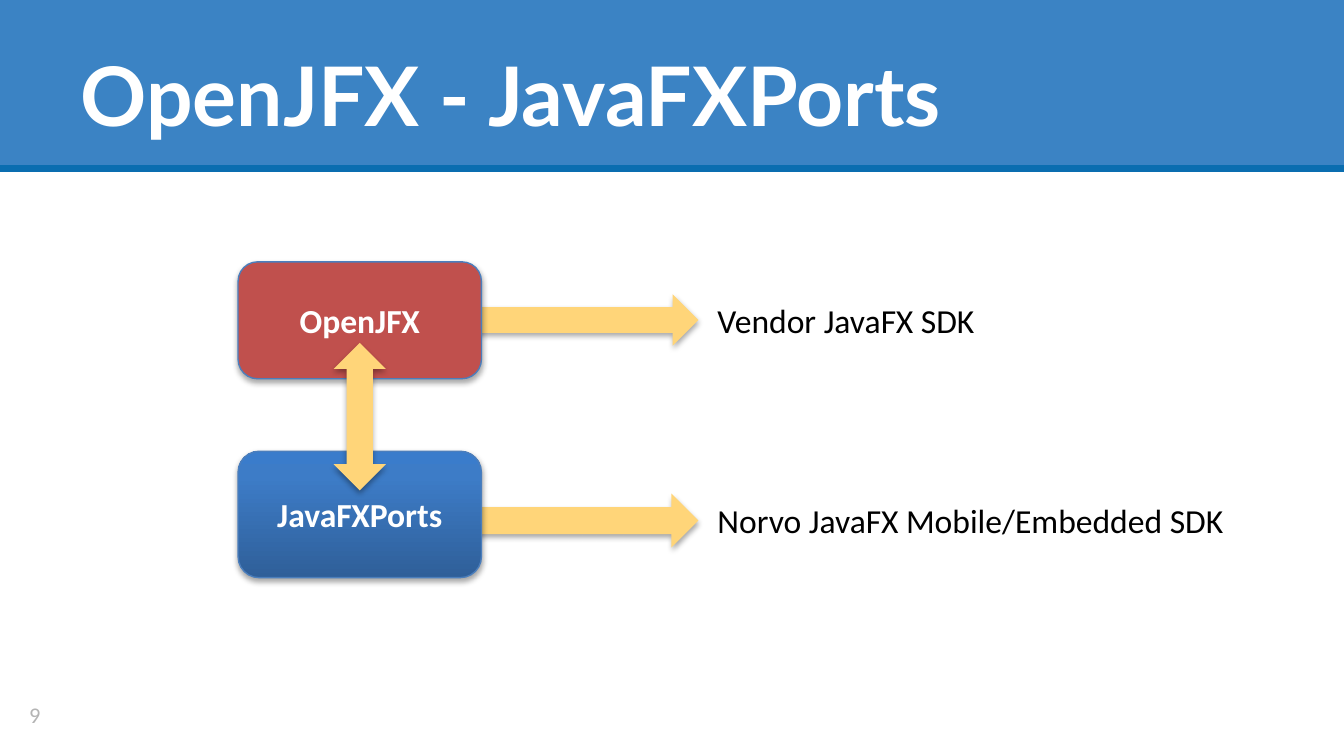
"""Build the slide on how OpenJFX and JavaFXPorts feed their SDKs."""
from copy import deepcopy

from lxml.etree import SubElement
from pptx import Presentation
from pptx.dml.color import RGBColor
from pptx.enum.shapes import MSO_SHAPE
from pptx.enum.text import MSO_ANCHOR, MSO_AUTO_SIZE, PP_ALIGN
from pptx.oxml.ns import qn
from pptx.util import Cm, Pt

THEME = {
    "title_font": "Lato", "body_font": "Calibri",
    "title_size": 44, "body_size": 18, "number_size": 12,
    "band": "3B83C4", "rule": "0A6DB0", "arrow": "FFD579",
    "red": "C0504D", "outline": "4B7EBC",
    "blue": [(0, "2F5F99"), (0.8, "3D7CC7"), (1, "3A7CCB")],
    "white": "FFFFFF", "black": "000000", "grey": "B4B4B4",
}
SLIDE_W, SLIDE_H = 25.4, 14.29
TITLE = "OpenJFX - JavaFXPorts"
PAGE = "9"
BANDS = [(0, 3.25, "band"), (3.12, 0.13, "rule")]
BOX_X, BOX_W = 4.5, 4.6
ARROW_X, ARROW_W = 8.81, 4.39
LABEL_X, LABEL_H = 13.31, 1.02
LINK_W, LINK_TOP, LINK_H = 0.99, 6.48, 2.79
ROWS = [
    {"name": "OpenJFX", "fill": "red", "top": 4.95, "height": 2.21,
     "mid": 6.05, "arrow_h": 0.97, "sdk": "Vendor JavaFX SDK", "sdk_w": 6.6},
    {"name": "JavaFXPorts", "fill": "blue", "top": 8.53, "height": 2.39,
     "mid": 9.84, "arrow_h": 1.02, "sdk": "Norvo JavaFX Mobile/Embedded SDK",
     "sdk_w": 10.82},
]


def rgb(key):
    return RGBColor.from_string(THEME[key])


def set_text(tf, text, size, color, font="body_font", bold=False, align=PP_ALIGN.LEFT):
    tf.text = text
    p = tf.paragraphs[0]
    p.alignment = align
    f = p.runs[0].font
    f.name, f.size, f.bold = THEME[font], Pt(THEME[size]), bold
    f.color.rgb = rgb(color)


def fill_gradient(sp, stops):
    sp.fill.gradient()
    sp.fill.gradient_angle = 90
    gs_list = sp.element.spPr.find(".//" + qn("a:gsLst"))
    while len(gs_list) < len(stops):
        gs_list.append(deepcopy(gs_list[0]))
    for stop, (position, color) in zip(sp.fill.gradient_stops, stops):
        stop.position = position
        stop.color.rgb = RGBColor.from_string(color)


def add_shadow(sp):
    effects = sp.element.spPr.find(qn("a:effectLst"))
    outer = SubElement(effects, qn("a:outerShdw"), blurRad="40000", dist="23000",
                       dir="5400000", rotWithShape="0")
    color = SubElement(outer, qn("a:srgbClr"), val=THEME["black"])
    SubElement(color, qn("a:alpha"), val="35000")


def add_block(s, kind, at, fill, shadow=True):
    sp = s.shapes.add_shape(kind, *map(Cm, at))
    sp.shadow.inherit = False
    if isinstance(THEME[fill], list):
        fill_gradient(sp, THEME[fill])
    else:
        sp.fill.solid()
        sp.fill.fore_color.rgb = rgb(fill)
    sp.line.fill.background()
    if shadow:
        add_shadow(sp)
    return sp


def add_label(s, at, text, size, color):
    sp = s.shapes.add_textbox(*map(Cm, at))
    tf = sp.text_frame
    tf.word_wrap = True
    set_text(tf, text, size, color)
    return tf


def add_header(s):
    for top, height, fill in BANDS:
        add_block(s, MSO_SHAPE.RECTANGLE, (0, top, SLIDE_W, height), fill, shadow=False)
    title = s.shapes.title
    title.element.getparent().append(title.element)
    title.left, title.top, title.width, title.height = map(Cm, (1.27, 0.58, 22.86, 2.39))
    title.text_frame.vertical_anchor = MSO_ANCHOR.MIDDLE
    set_text(title.text_frame, TITLE, "title_size", "white", "title_font", bold=True)


def add_diagram(s):
    for row in ROWS:
        top = row["mid"] - row["arrow_h"] / 2
        add_block(s, MSO_SHAPE.RIGHT_ARROW, (ARROW_X, top, ARROW_W, row["arrow_h"]), "arrow")
    for row in ROWS:
        box = add_block(s, MSO_SHAPE.ROUNDED_RECTANGLE,
                        (BOX_X, row["top"], BOX_W, row["height"]), row["fill"])
        box.line.color.rgb = rgb("outline")
        box.line.width = Pt(0.75)
        box.text_frame.vertical_anchor = MSO_ANCHOR.MIDDLE
        set_text(box.text_frame, row["name"], "body_size", "white", bold=True,
                 align=PP_ALIGN.CENTER)
        tf = add_label(s, (LABEL_X, row["mid"] - LABEL_H / 2, row["sdk_w"], LABEL_H),
                       row["sdk"], "body_size", "black")
        tf.auto_size = MSO_AUTO_SIZE.SHAPE_TO_FIT_TEXT
    link_x = BOX_X + (BOX_W - LINK_W) / 2
    add_block(s, MSO_SHAPE.UP_DOWN_ARROW, (link_x, LINK_TOP, LINK_W, LINK_H), "arrow")


def main():
    prs = Presentation()
    prs.slide_width, prs.slide_height = Cm(SLIDE_W), Cm(SLIDE_H)
    s = prs.slides.add_slide(prs.slide_layouts[5])
    add_header(s)
    add_diagram(s)
    number = add_label(s, (0.3, 13.13, 3.12, 0.76), PAGE, "number_size", "grey")
    number.vertical_anchor = MSO_ANCHOR.MIDDLE
    prs.save("out.pptx")


if __name__ == "__main__":
    main()
